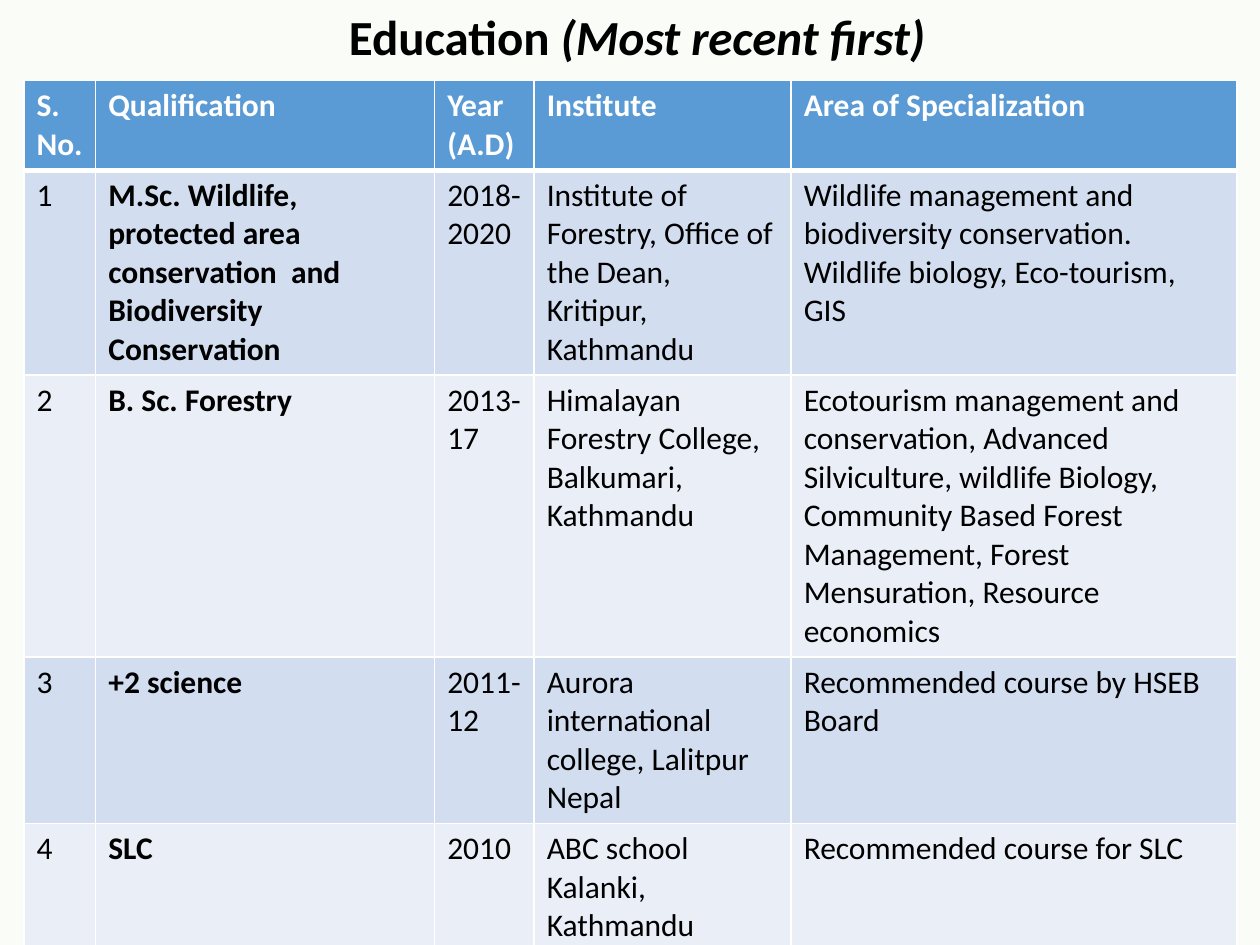
from lxml.etree import SubElement
from pptx import Presentation
from pptx.dml.color import RGBColor
from pptx.enum.text import MSO_ANCHOR, PP_ALIGN
from pptx.oxml.ns import qn
from pptx.util import Inches, Pt

BACKGROUND = RGBColor(0xF9, 0xFC, 0xF7)
BLACK = RGBColor(0, 0, 0)
WHITE = RGBColor(0xFF, 0xFF, 0xFF)
HEADER = RGBColor(0x5B, 0x9B, 0xD5)
BANDS = [RGBColor(0xEA, 0xEF, 0xF7), RGBColor(0xD2, 0xDE, 0xEF)]
FONT = "Calibri"

COLUMNS = [0.57, 2.69, 0.79, 2.04, 3.54]
ROWS = [0.69, 1.6, 2.2, 1.3, 1.01]
EDUCATION = [
    ["S. No.", "Qualification", "Year (A.D)", "Institute",
     "Area of Specialization"],
    ["1",
     "M.Sc. Wildlife, protected area conservation  and Biodiversity Conservation",
     "2018- 2020",
     "Institute of Forestry, Office of the Dean, Kritipur, Kathmandu",
     "Wildlife management and biodiversity conservation. "
     "Wildlife biology, Eco-tourism, GIS"],
    ["2", "B. Sc. Forestry", "2013-17",
     "Himalayan Forestry College, Balkumari, Kathmandu",
     "Ecotourism management and conservation, Advanced Silviculture, "
     "wildlife Biology, Community Based Forest Management, "
     "Forest Mensuration, Resource economics"],
    ["3", "+2 science", "2011-12",
     "Aurora international college, Lalitpur Nepal",
     "Recommended course by HSEB Board"],
    ["4", "SLC", "2010", "ABC school Kalanki, Kathmandu",
     "Recommended course for SLC"],
]


def style_run(r, size, color, bold=False, italic=False):
    r.font.name = FONT
    r.font.size = Pt(size)
    r.font.color.rgb = color
    r.font.bold = bold
    r.font.italic = italic


def add_title(s, text, note):
    title = s.shapes.title
    title.left, title.top = Inches(0.29), 0
    title.width, title.height = Inches(9.53), Inches(0.57)
    tf = title.text_frame
    tf.word_wrap = True
    tf.vertical_anchor = MSO_ANCHOR.MIDDLE
    p = tf.paragraphs[0]
    p.text = text
    p.alignment = PP_ALIGN.CENTER
    p.add_run().text = note
    for r, italic in zip(p.runs, (False, True)):
        style_run(r, 28, BLACK, bold=True, italic=italic)


def set_borders(cell, widths):
    tc_pr = cell._tc.get_or_add_tcPr()
    for side, width in widths.items():
        ln = SubElement(tc_pr, qn(f"a:ln{side}"), w=str(Pt(width)))
        fill = SubElement(ln, qn("a:solidFill"))
        SubElement(fill, qn("a:srgbClr"), val=str(WHITE))


def format_cell(cell, text, row, col):
    is_header = row == 0
    cell.text = text
    style_run(cell.text_frame.paragraphs[0].runs[0], 18,
              WHITE if is_header else BLACK, bold=is_header or col == 1)
    set_borders(cell, {"L": 1, "R": 1, "T": 3 if row == 1 else 1,
                       "B": 3 if is_header else 1})
    cell.fill.solid()
    cell.fill.fore_color.rgb = HEADER if is_header else BANDS[row % 2]


def add_education_table(s):
    table = s.shapes.add_table(
        len(ROWS), len(COLUMNS), Inches(0.19), Inches(0.64),
        Inches(sum(COLUMNS)), Inches(sum(ROWS))).table
    for column, width in zip(table.columns, COLUMNS):
        column.width = Inches(width)
    for i, height in enumerate(ROWS):
        table.rows[i].height = Inches(height)
        for j, text in enumerate(EDUCATION[i]):
            format_cell(table.cell(i, j), text, i, j)


def main():
    prs = Presentation()
    prs.slide_width, prs.slide_height = Inches(10), Inches(7.5)
    s = prs.slides.add_slide(prs.slide_layouts[5])
    s.background.fill.solid()
    s.background.fill.fore_color.rgb = BACKGROUND
    add_title(s, "Education ", "(Most recent first)")
    add_education_table(s)
    prs.save("out.pptx")


if __name__ == "__main__":
    main()
